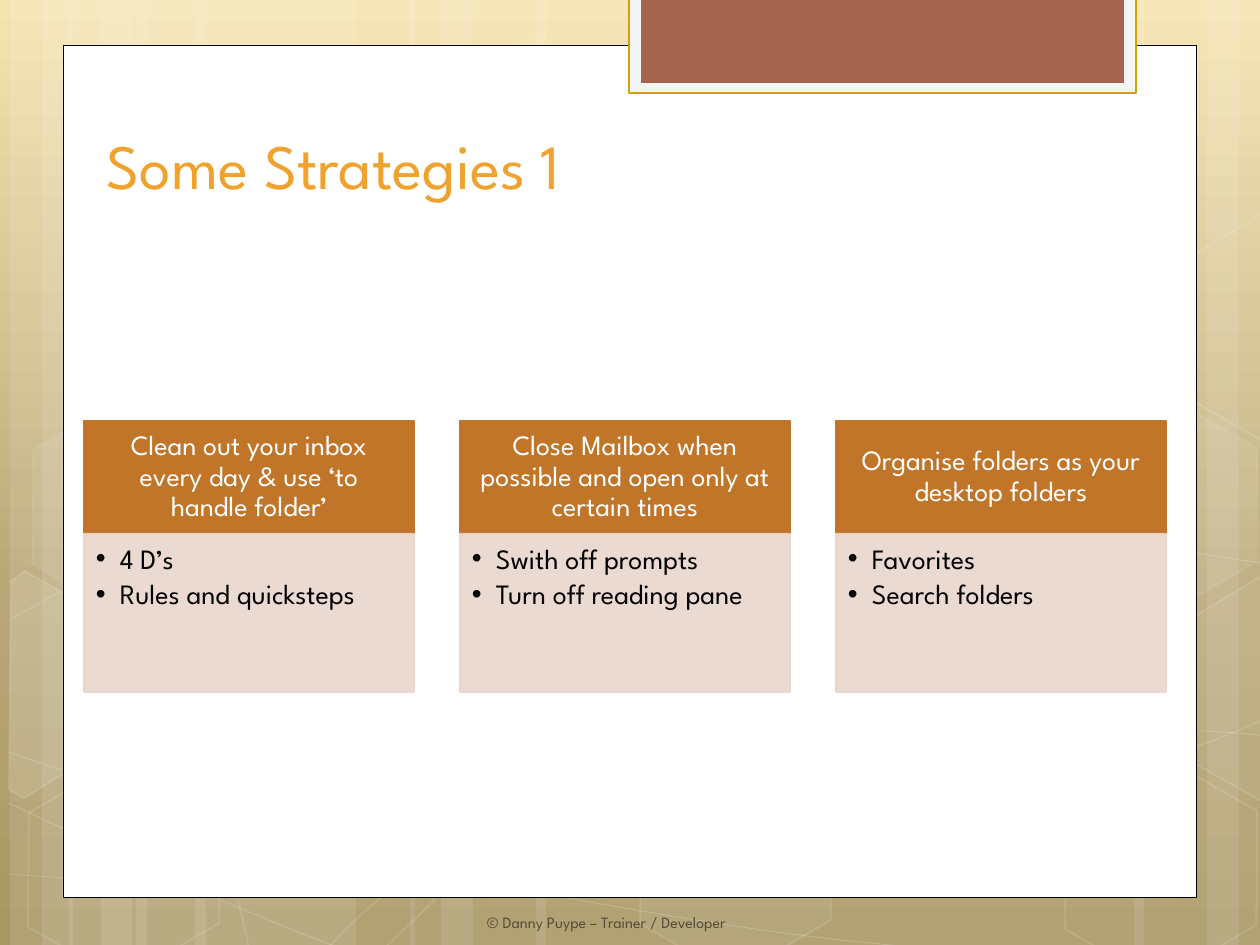
import pptx
import pptx.util
import pptx.dml.color
import pptx.enum.shapes
import pptx.enum.text
import pptx.oxml
import pptx.oxml.ns

SCALE = 914400 / 126
W, H = 1260, 945
THEME = {
    "font": "League Spartan", "bullet_font": "Arial",
    "white": "FFFFFF", "black": "000000", "tab": "A5644E", "tab_edge": "F5F5F5",
    "gold": "D2A010", "title": "F0A22E", "footer": "534B38",
    "head": "C17529", "body": "E9D6CD",
    "sky": [(0, "F6E4B0"), (62, "BAA878"), (100, "A99764")],
    "title_size": 36, "card_size": 16, "footer_size": 9,
}
SHAPE = pptx.enum.shapes.MSO_SHAPE
ALIGN = pptx.enum.text.PP_ALIGN
ANCHOR = pptx.enum.text.MSO_ANCHOR
DECL = pptx.oxml.ns.nsdecls("a")
NS = {"a": DECL.split('"')[1]}

STREAKS = [(136, 220), (10, 63), (42, 105), (195, 220), (69, 63), (101, 105),
           (924, 220), (1207, 63), (1134, 105), (536, 388), (410, 63), (441, 105)]
CURVES = [
    [(9, 874), (77, 879), (145, 883), (239, 882), (334, 879), (451, 878), (577, 864),
     (703, 852), (882, 827), (998, 803), (1113, 777), (1231, 738), (1269, 716)],
    [(9, 620), (45, 600), (77, 580), (152, 561), (224, 542), (326, 513), (437, 503),
     (549, 494), (685, 493), (824, 503), (963, 514), (1193, 554), (1269, 564)],
    [(8, 803), (160, 873), (311, 945), (421, 974)],
    [(9, 752), (48, 766), (88, 780), (161, 800), (234, 822), (344, 853), (450, 874),
     (554, 897), (687, 920), (791, 934), (896, 948), (1008, 954), (1075, 958),
     (1140, 961), (1158, 960), (1191, 959), (1223, 959), (1246, 956), (1269, 954)],
    [(305, 974), (328, 949), (350, 922), (381, 898), (411, 874), (454, 849), (489, 832),
     (524, 814), (546, 805), (592, 793), (638, 779), (722, 760), (766, 752),
     (811, 743), (818, 743), (857, 740), (896, 736), (958, 733), (1000, 731),
     (1044, 730), (1116, 731), (1116, 731), (1144, 731), (1173, 731), (1201, 731),
     (1223, 732), (1244, 733), (1256, 735), (1268, 736), (1264, 736), (1268, 736)],
]
HEXAGONS = [(421, 47, 30, 4, 8), (626, 766, 30, 6, 12), (14, 769, 30, 0, 12),
            (18, 406, 30, 7, 8), (219, 770, 16.7, 0, 12), (949, 590, 30, 10, 12),
            (1051, 771, 30, 0, 12), (1051, 408, 30, 7, 8)]
CUT_HEXAGONS = [
    ([(11, 581), (25, 571), (122, 627), (120, 740), (24, 798), (9, 790)], 10),
    ([(1167, 633), (1263, 575), (1273, 581), (1270, 796), (1261, 801), (1164, 746)], 4),
    ([(1167, 271), (1263, 213), (1274, 219), (1270, 435), (1261, 440), (1164, 384)], 0),
]
CARDS = [
    ("Clean out your inbox every day & use ‘to handle folder’",
     ["4 D’s", "Rules and quicksteps"]),
    ("Close Mailbox when possible and open only at certain times",
     ["Swith off prompts", "Turn off reading pane"]),
    ("Organise folders as your desktop folders", ["Favorites", "Search folders"]),
]


def px(n):
    return pptx.util.Emu(round(n * SCALE))


def rgb(name):
    return pptx.dml.color.RGBColor.from_string(THEME[name])


def element(tag, attrs="", inner=""):
    return pptx.oxml.parse_xml(f"<a:{tag} {DECL} {attrs}>{inner}</a:{tag}>")


def set_all(obj, values):
    for name, value in values.items():
        setattr(obj, name, value)


def paint(sp, fill=None, fill_alpha=100, line=None, width=1, line_alpha=100):
    sp.shadow.inherit = False
    parts = [(sp.fill, fill, fill_alpha, "a:solidFill/a:srgbClr"),
             (sp.line.fill, line, line_alpha, "a:ln/a:solidFill/a:srgbClr")]
    for fmt, color, alpha, tag in parts:
        if color is None:
            fmt.background()
            continue
        fmt.solid()
        fmt.fore_color.rgb = rgb(color)
        if alpha < 100:
            sp.element.spPr.find(tag, NS).append(element("alpha", f'val="{alpha * 1000}"'))
    if line:
        sp.line.width = pptx.util.Pt(width)
    return sp


def add_shape(shapes, kind, box, **style):
    return paint(shapes.add_shape(kind, *map(px, box)), **style)


def add_outline(shapes, points, close, **style):
    fb = shapes.build_freeform(*points[0], scale=SCALE)
    fb.add_line_segments(points[1:], close=close)
    return paint(fb.convert_to_shape(), **style)


def bend(sp):
    lines = list(sp.element.spPr.iter(pptx.oxml.ns.qn("a:lnTo")))
    for i in range(0, len(lines), 3):
        curve = element("cubicBezTo")
        lines[i].addprevious(curve)
        for line in lines[i:i + 3]:
            curve.append(line[0])
            line.getparent().remove(line)


def write(sp, lines, size, color, insets, frame, para):
    tf = sp.text_frame
    sides = ("margin_left", "margin_top", "margin_right", "margin_bottom")
    set_all(tf, {"word_wrap": True, **dict(zip(sides, map(px, insets))), **frame})
    for i, line in enumerate(lines):
        p = tf.paragraphs[0] if i == 0 else tf.add_paragraph()
        set_all(p, para)
        r = p.add_run()
        r.text = line
        set_all(r.font, {"name": THEME["font"], "size": pptx.util.Pt(THEME[size])})
        r.font.color.rgb = rgb(color)
    return tf


def add_bullets(tf, indent):
    for p in tf.paragraphs:
        ppr = p._p.get_or_add_pPr()
        ppr.set("marL", str(px(indent)))
        ppr.set("indent", str(-px(indent)))
        ppr.append(element("buFont", f'typeface="{THEME["bullet_font"]}"'))
        ppr.append(element("buChar", 'char="•"'))


def draw_background(slide):
    fill = slide.background.fill
    fill.gradient()
    fill.gradient_angle = 270
    stops = "".join(f'<a:gs pos="{pos * 1000}"><a:srgbClr val="{color}"/></a:gs>'
                    for pos, color in THEME["sky"])
    old = next(slide.element.iter(pptx.oxml.ns.qn("a:gsLst")))
    old.getparent().replace(old, element("gsLst", inner=stops))


def draw_pattern(shapes, h):
    for x, w in STREAKS:
        add_shape(shapes, SHAPE.RECTANGLE, (x, 0, w, h), fill="white", fill_alpha=10)
    for knots in CURVES:
        bend(add_outline(shapes, knots, False, line="white", width=0.5, line_alpha=20))
    for x, y, angle, fill_alpha, line_alpha in HEXAGONS:
        sp = add_shape(shapes, SHAPE.HEXAGON, (x, y, 220, 198),
                       fill="white" if fill_alpha else None, fill_alpha=fill_alpha,
                       line="white", line_alpha=line_alpha)
        sp.rotation = angle
        sp.adjustments[0] = 0.285
    for points, alpha in CUT_HEXAGONS:
        add_outline(shapes, points, True, fill="white" if alpha else None,
                    fill_alpha=alpha, line="white", line_alpha=12)


def draw_panel(shapes, x, y, w, h):
    add_shape(shapes, SHAPE.RECTANGLE, (x, y, w, h), fill="white", line="black", width=0.5)
    add_shape(shapes, SHAPE.RECTANGLE, (x + 566, -2, 507, 95),
              fill="tab_edge", line="gold", width=1.25)
    add_shape(shapes, SHAPE.RECTANGLE, (x + 578, -2, 483, 85), fill="tab")


def draw_label(shapes, box, text, size, color, frame):
    write(shapes.add_textbox(*map(px, box)), [text], size, color, (13, 6, 13, 6), frame, {})


def draw_card(shapes, x, y, w, h, title, items):
    head_h = 112
    head = add_shape(shapes, SHAPE.RECTANGLE, (x, y, w, head_h),
                     fill="head", line="head", width=1.25)
    write(head, [title], "card_size", "white", (15, 9, 15, 9),
          {"vertical_anchor": ANCHOR.MIDDLE},
          {"alignment": ALIGN.CENTER, "line_spacing": 0.9})
    body = add_shape(shapes, SHAPE.RECTANGLE, (x, y + head_h + 1, w, h - head_h - 1),
                     fill="body", fill_alpha=90, line="body", width=1.25, line_alpha=90)
    tf = write(body, items, "card_size", "black", (12, 11, 15, 18),
               {"vertical_anchor": ANCHOR.TOP},
               {"alignment": ALIGN.LEFT, "line_spacing": 0.9,
                "space_after": pptx.util.Pt(3)})
    add_bullets(tf, 24)


def draw_cards(shapes, x, y, w, h, gap):
    card_w = (w - gap * (len(CARDS) - 1)) // len(CARDS)
    for i, (title, items) in enumerate(CARDS):
        draw_card(shapes, x + i * (card_w + gap), y, card_w, h, title, items)


def main():
    prs = pptx.Presentation()
    set_all(prs, {"slide_width": px(W), "slide_height": px(H)})
    slide = prs.slides.add_slide(prs.slide_layouts[6])
    draw_background(slide)
    draw_pattern(slide.shapes, 975)
    draw_panel(slide.shapes, 63, 45, 1134, 853)
    draw_label(slide.shapes, (474, 907, 310, 32), "© Danny Puype – Trainer / Developer",
               "footer_size", "footer", {"word_wrap": False})
    draw_cards(slide.shapes, 84, 421, 1082, 271, 46)
    draw_label(slide.shapes, (94, 125, 968, 83), "Some Strategies 1",
               "title_size", "title", {"vertical_anchor": ANCHOR.BOTTOM})
    prs.save("out.pptx")


if __name__ == "__main__":
    main()
